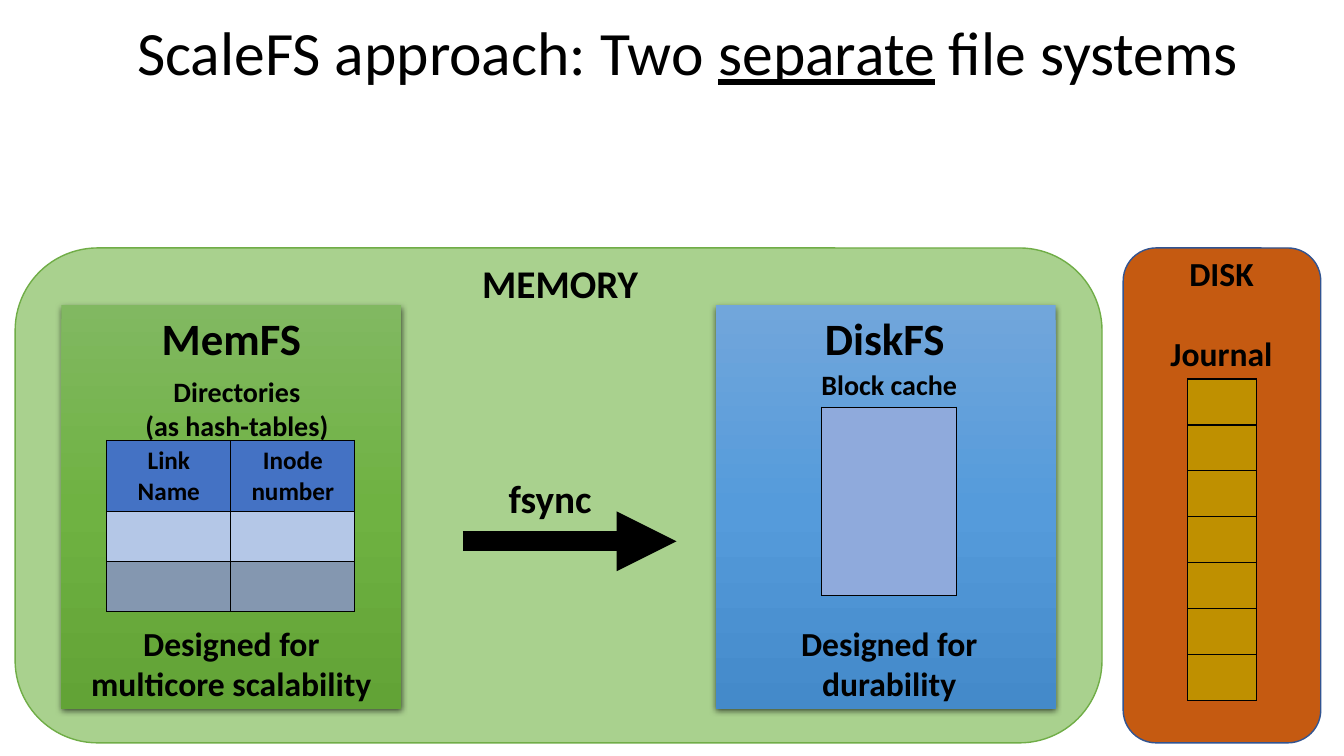
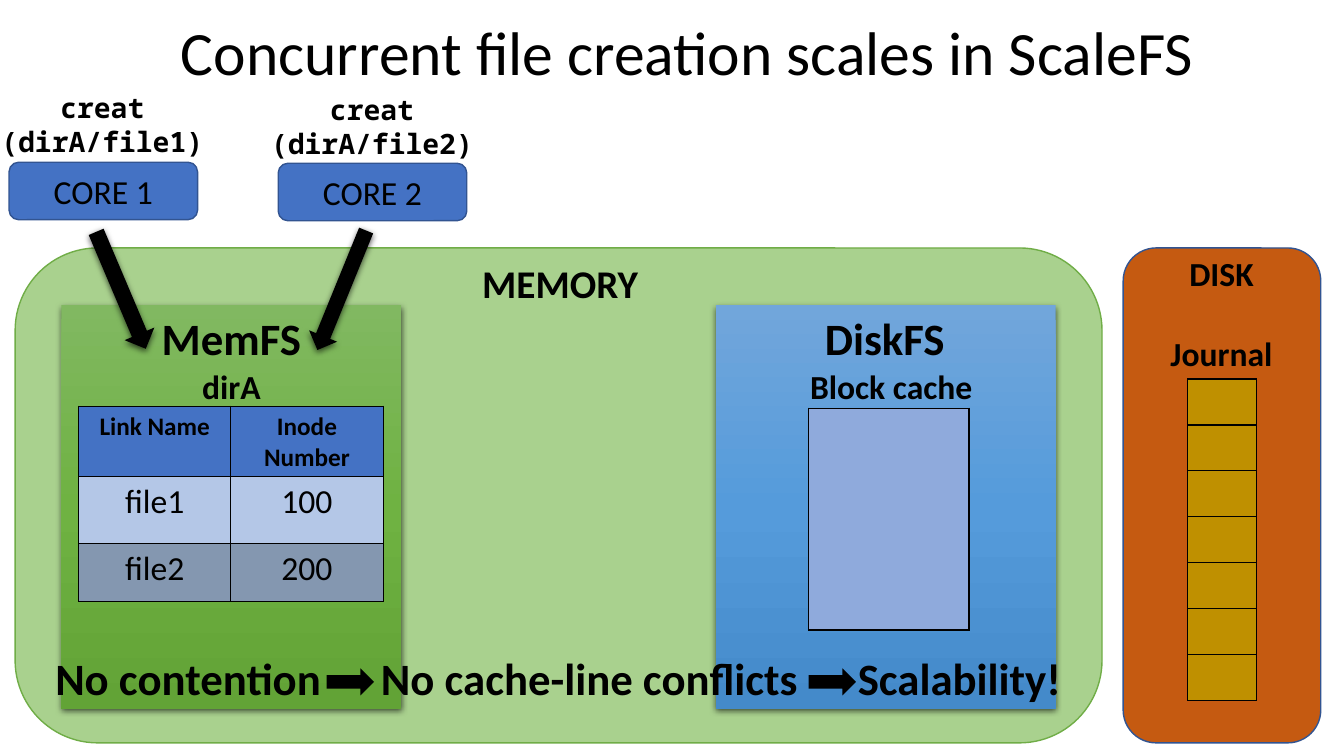
"""Build two slides that explain the ScaleFS design."""
from copy import deepcopy

from lxml.etree import SubElement
from pptx import Presentation
from pptx.dml.color import RGBColor
from pptx.enum.shapes import MSO_CONNECTOR as Connector, MSO_SHAPE as Shape
from pptx.enum.text import MSO_ANCHOR as Anchor, PP_ALIGN as Align
from pptx.oxml.ns import qn
from pptx.util import Inches, Pt

COLORS = {
    "ink": "000000",
    "memory": "A9D18E",
    "memory_edge": "70AD47",
    "disk": "C55A11",
    "edge": "325491",
    "core": "4472C4",
    "header": "4472C4",
    "row_light": "B4C7E7",
    "row_dark": "8497B0",
    "journal": "BF9000",
    "cache": "8FAADC",
}
GRADIENTS = {
    "memfs": ("81B861", "6FB242", "62A336"),
    "diskfs": ("71A6DB", "559BDB", "448ACA"),
}
FONT = "Calibri"
MONO = "Noto Sans Mono"


def color(name):
    return RGBColor.from_string(COLORS[name])


class Deck:
    def __init__(self):
        self.presentation = Presentation()
        self.presentation.slide_width = Inches(13.33)
        self.presentation.slide_height = Inches(7.5)
        self.slide = None

    def new_slide(self):
        layout = self.presentation.slide_layouts[6]
        self.slide = self.presentation.slides.add_slide(layout)

    def format_text(self, text_frame, size, bold=True, font=FONT, align=Align.CENTER):
        for paragraph in text_frame.paragraphs:
            paragraph.alignment = align
            for run in paragraph.runs:
                run.font.size = Pt(size)
                run.font.bold = bold
                run.font.name = font
                run.font.color.rgb = color("ink")

    def text(self, box, words, size, **style):
        shape = self.slide.shapes.add_textbox(*map(Inches, box))
        text_frame = shape.text_frame
        text_frame.word_wrap = True
        text_frame.text = words
        self.format_text(text_frame, size, **style)
        return text_frame

    def title(self, words, underlined="", ending=""):
        text_frame = self.text((1.07, 0.16, 11.5, 0.79), words, 44, bold=False)
        text_frame.vertical_anchor = Anchor.MIDDLE
        paragraph = text_frame.paragraphs[0]
        paragraph.line_spacing = 0.9
        if underlined:
            paragraph.add_run().text = underlined
            paragraph.runs[1].font.underline = True
            paragraph.add_run().text = ending
            self.format_text(text_frame, 44, bold=False)

    def shape(self, kind, box, fill, edge=None, rotation=0, shadow=False):
        shape = self.slide.shapes.add_shape(kind, *map(Inches, box))
        shape.rotation = rotation
        shape.shadow.inherit = False
        if fill in GRADIENTS:
            self.gradient(shape, GRADIENTS[fill])
        else:
            shape.fill.solid()
            shape.fill.fore_color.rgb = color(fill)
        if edge:
            shape.line.color.rgb = color(edge)
            shape.line.width = Pt(1)
        else:
            shape.line.fill.background()
        if shadow:
            self.drop_shadow(shape)
        return shape

    def gradient(self, shape, hexes):
        shape.fill.gradient()
        shape.fill.gradient_angle = 270
        stop_list = shape.element.spPr.find(".//" + qn("a:gsLst"))
        stop_list.insert(1, deepcopy(stop_list[0]))
        for index, stop in enumerate(shape.fill.gradient_stops):
            stop.position = index / 2
            stop.color.rgb = RGBColor.from_string(hexes[index])

    def drop_shadow(self, shape):
        effects = shape.element.spPr.find(qn("a:effectLst"))
        outer = SubElement(effects, qn("a:outerShdw"), blurRad=str(Pt(4.5)),
                           dist=str(Pt(1.5)), dir="5400000", algn="ctr", rotWithShape="0")
        tint = SubElement(outer, qn("a:srgbClr"), val=COLORS["ink"])
        SubElement(tint, qn("a:alpha"), val="63000")

    def arrow(self, start, end, width):
        connector = self.slide.shapes.add_connector(
            Connector.STRAIGHT, *map(Inches, start + end))
        connector.line.color.rgb = color("ink")
        connector.line.width = Pt(width)
        SubElement(connector.line._get_or_add_ln(), qn("a:tailEnd"), type="triangle")
        SubElement(connector._element.spPr, qn("a:effectLst"))

    def table(self, left, top, widths, heights, fills, rows=(), sizes=()):
        frame = self.slide.shapes.add_table(
            len(heights), len(widths), Inches(left), Inches(top),
            Inches(sum(widths)), Inches(sum(heights)))
        table = frame.table
        table.first_row = table.horz_banding = False
        for column, width in zip(table.columns, widths):
            column.width = Inches(width)
        for row, height, fill in zip(table.rows, heights, fills):
            row.height = Inches(height)
            for cell in row.cells:
                self.border(cell)
                cell.fill.solid()
                cell.fill.fore_color.rgb = color(fill)
        for index, (words, size) in enumerate(zip(rows, sizes)):
            for cell, word in zip(table.rows[index].cells, words):
                cell.text_frame.text = word
                self.format_text(cell.text_frame, size, bold=index == 0)

    def border(self, cell):
        properties = cell._tc.get_or_add_tcPr()
        for side in ("a:lnL", "a:lnR", "a:lnT", "a:lnB"):
            line = SubElement(properties, qn(side), w=str(Pt(1)))
            fill = SubElement(line, qn("a:solidFill"))
            SubElement(fill, qn("a:srgbClr"), val=COLORS["ink"])

    def storage_scene(self):
        self.shape(Shape.ROUNDED_RECTANGLE, (0.15, 2.46, 10.78, 4.91), "memory", "memory_edge")
        self.text((3.69, 2.52, 3.73, 0.57), "MEMORY", 28)
        for left, label_left, fill, name in ((7.1, 7.95, "diskfs", "DiskFS"),
                                             (0.61, 1.47, "memfs", "MemFS")):
            self.shape(Shape.RECTANGLE, (left, 3.03, 3.37, 4), fill, shadow=True)
            self.text((label_left, 3.03, 1.65, 0.64), name, 32)
        self.shape(Shape.ROUNDED_RECTANGLE, (11.14, 2.46, 1.96, 4.91), "disk", "edge")
        self.table(11.78, 3.76, [0.68], [3.19 / 7] * 7, ["journal"] * 7)
        self.text((11.38, 3.25, 1.47, 0.5), "Journal", 24)
        self.text((10.73, 2.46, 2.77, 0.5), "DISK", 24)

    def directory(self, left, top, width, heights, rows, sizes):
        self.table(left, top, [width] * 2, heights,
                   ("header", "row_light", "row_dark"), rows, sizes)

    def block_cache(self, left, top, width, height, label_box, size):
        self.text(label_box, "Block cache", size)
        self.table(left, top, [width], [height], ["cache"])

    def core(self, number, box, call_box):
        self.text(call_box, f"creat\n(dirA/file{number})", 20, font=MONO)
        shape = self.shape(Shape.ROUNDED_RECTANGLE, box, "core", "edge")
        shape.text_frame.text = f"CORE {number}"
        shape.text_frame.vertical_anchor = Anchor.MIDDLE
        self.format_text(shape.text_frame, 24, bold=False)


def approach_slide(deck):
    deck.new_slide()
    deck.title("ScaleFS approach: Two ", "separate", " file systems")
    deck.storage_scene()
    deck.text((1.13, 3.67, 2.44, 0.77), "Directories\n(as hash-tables)", 20)
    deck.directory(1.06, 4.37, 1.23, (0.7, 0.5, 0.5),
                   [("Link Name", "Inode\nnumber")], [18])
    deck.block_cache(8.15, 4.04, 1.34, 1.87, (7.6, 3.6, 2.44, 0.44), 20)
    deck.text((0.48, 6.13, 3.63, 0.91), "Designed for\nmulticore scalability", 24)
    deck.text((7.15, 6.13, 3.34, 0.91), "Designed for\ndurability", 24)
    deck.arrow((4.59, 5.37), (6.71, 5.37), 14.25)
    deck.text((4.28, 4.66, 2.35, 0.57), "fsync", 28)


def creation_slide(deck):
    deck.new_slide()
    deck.title("Concurrent file creation scales in ScaleFS")
    deck.storage_scene()
    deck.text((0.37, 3.58, 3.85, 0.5), "dirA", 24)
    deck.directory(0.78, 4.03, 1.51, (0.7, 0.66, 0.58),
                   [("Link Name", "Inode Number"), ("file1", "100"), ("file2", "200")],
                   [18, 24, 24])
    deck.block_cache(8.02, 4.05, 1.59, 2.2, (7.62, 3.58, 2.44, 0.5), 24)
    deck.core(1, (0.09, 1.61, 1.87, 0.57), (-0.38, 0.85, 2.79, 0.77))
    deck.core(2, (2.76, 1.62, 1.87, 0.57), (2.15, 0.87, 3.08, 0.77))
    for box, rotation in (((1.04, 2.25, 0.32, 1.26), 337), ((3.24, 2.24, 0.3, 1.28), 22.2)):
        deck.shape(Shape.DOWN_ARROW, box, "ink", rotation=rotation, shadow=True)
    for left, width, words in ((0.45, 2.9, "No contention"),
                               (3.68, 4.5, "No cache-line conflicts"),
                               (8.41, 2.4, "Scalability!")):
        deck.text((left, 6.41, width, 0.64), words, 32, align=Align.LEFT)
    for left in (3.24, 8.02):
        deck.shape(Shape.RIGHT_ARROW, (left, 6.63, 0.47, 0.27), "ink")


def main():
    deck = Deck()
    approach_slide(deck)
    creation_slide(deck)
    deck.presentation.save("out.pptx")


if __name__ == "__main__":
    main()
